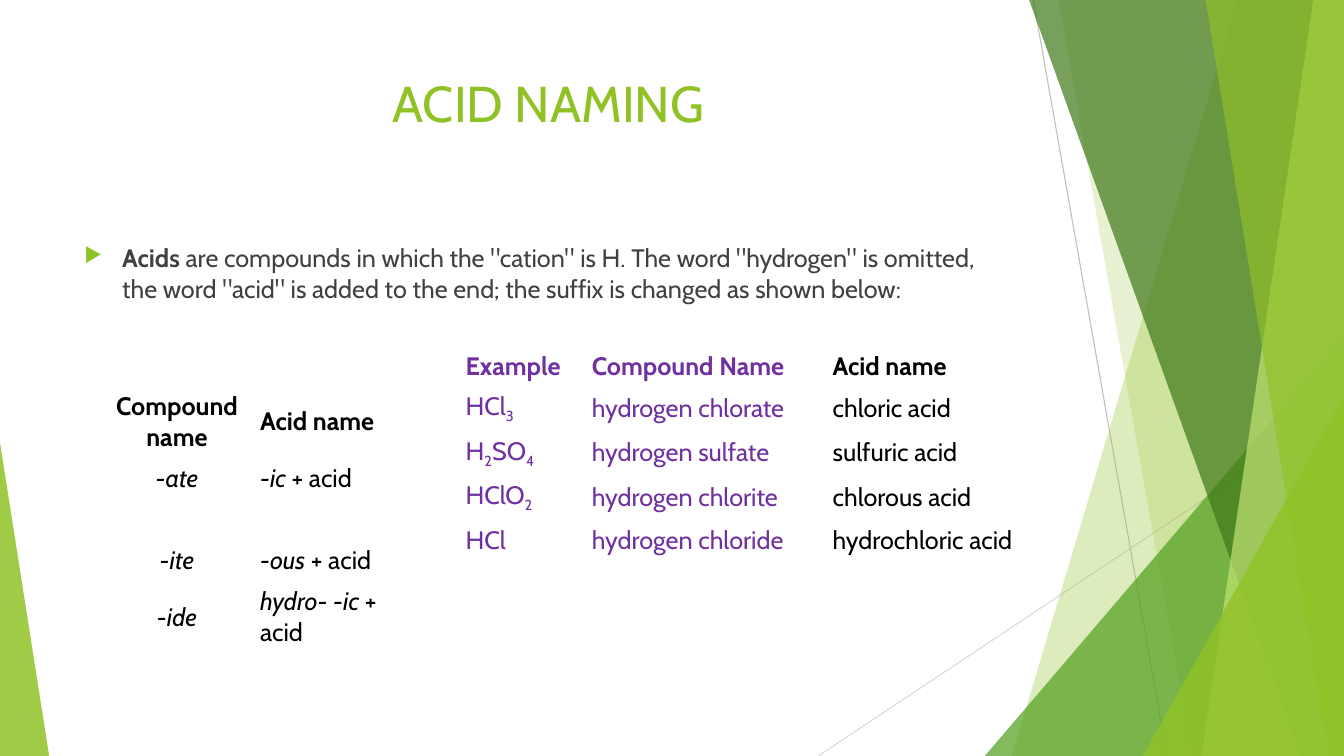
from dataclasses import dataclass
from typing import NamedTuple

from lxml import etree
from pptx import Presentation
from pptx.dml.color import RGBColor
from pptx.enum import shapes as kinds, text as txt
from pptx.oxml import ns
from pptx.util import Cm, Pt

COLORS = {
    "lime": "90C226", "green": "54A021", "forest": "3F7819", "pale": "C0E474",
    "gray": "BFBFBF", "light_gray": "D9D9D9", "body": "404040",
    "purple": "7030A0", "black": "000000",
}
FONT = "Cabin"
WIDTH, HEIGHT = 33.87, 19.05


class Run(NamedTuple):
    text: str
    bold: bool = False
    italic: bool = False
    sub: bool = False


class Ray(NamedTuple):
    start: tuple[float, float]
    end: tuple[float, float]
    color: str


class Blade(NamedTuple):
    """A panel reaching the right edge, with a slanted left side."""
    top_x: float
    bottom_x: float
    color: str
    alpha: int


class Wedge(NamedTuple):
    """A triangle standing on the bottom edge."""
    left: float
    top: float
    width: float
    apex: float
    color: str
    alpha: int


@dataclass
class Grid:
    left: float
    top: float
    columns: list[float]
    heights: list[float]
    colors: list[str]
    centered: set[int]
    rows: list[list[list[Run]]]


def rgb(name: str) -> RGBColor:
    return RGBColor.from_string(COLORS[name])


def add_xml(parent, tag: str, **attributes: str):
    return etree.SubElement(parent, ns.qn(tag), attributes)


def paint(shape, color: str, alpha: int) -> None:
    shape.shadow.inherit = False
    shape.fill.solid()
    shape.fill.fore_color.rgb = rgb(color)
    shape.line.fill.background()
    for fill_color in shape.element.iter(ns.qn("a:srgbClr")):
        add_xml(fill_color, "a:alpha", val=str(alpha * 1000))


def draw_ray(slide, ray: Ray) -> None:
    line = slide.shapes.add_connector(
        kinds.MSO_CONNECTOR.STRAIGHT, *map(Cm, ray.start + ray.end))
    line.line.color.rgb = rgb(ray.color)
    line.line.width = Pt(0.75)
    add_xml(line.element.spPr, "a:effectLst")


def draw_blade(slide, blade: Blade) -> None:
    top = Cm(-0.02)
    outline = slide.shapes.build_freeform(Cm(blade.top_x), top)
    outline.add_line_segments([
        (Cm(WIDTH), top), (Cm(WIDTH), Cm(HEIGHT)), (Cm(blade.bottom_x), Cm(HEIGHT))])
    paint(outline.convert_to_shape(), blade.color, blade.alpha)


def draw_wedge(slide, wedge: Wedge) -> None:
    triangle = slide.shapes.add_shape(
        kinds.MSO_SHAPE.ISOSCELES_TRIANGLE, Cm(wedge.left), Cm(wedge.top),
        Cm(wedge.width), Cm(HEIGHT - wedge.top))
    triangle.adjustments[0] = wedge.apex
    paint(triangle, wedge.color, wedge.alpha)


def write(paragraph, runs: list[Run], size: int, color: str) -> None:
    font = paragraph.font
    font.name, font.size = FONT, Pt(size)
    font.color.rgb = rgb(color)
    for piece in runs:
        run = paragraph.add_run()
        run.text = piece.text
        run.font.bold, run.font.italic = piece.bold, piece.italic
        if piece.sub:
            run._r.get_or_add_rPr().set("baseline", "-25000")


def add_paragraph_box(slide, top: float, height: float):
    frame = slide.shapes.add_textbox(Cm(1.88), Cm(top), Cm(23.88), Cm(height)).text_frame
    frame.word_wrap = True
    return frame.paragraphs[0]


def add_bullet(paragraph) -> None:
    properties = paragraph._p.get_or_add_pPr()
    properties.set("marL", str(Cm(0.95)))
    properties.set("indent", str(Cm(-0.95)))
    add_xml(add_xml(properties, "a:buClr"), "a:srgbClr", val=COLORS["lime"])
    add_xml(properties, "a:buSzPct", val="80000")
    add_xml(properties, "a:buChar", char="▶")


def draw_grid(slide, grid: Grid) -> None:
    table = slide.shapes.add_table(
        len(grid.rows), len(grid.columns), Cm(grid.left), Cm(grid.top),
        Cm(sum(grid.columns)), Cm(sum(grid.heights))).table
    table.first_row = table.horz_banding = False
    for column, width in zip(table.columns, grid.columns):
        column.width = Cm(width)
    for row, height, contents in zip(table.rows, grid.heights, grid.rows):
        row.height = Cm(height)
        for index, (cell, runs) in enumerate(zip(row.cells, contents)):
            cell.fill.background()
            cell.vertical_anchor = txt.MSO_ANCHOR.MIDDLE
            paragraph = cell.text_frame.paragraphs[0]
            if index in grid.centered:
                paragraph.alignment = txt.PP_ALIGN.CENTER
            write(paragraph, runs, 18, grid.colors[index])


def header(*titles: str) -> list[list[Run]]:
    return [[Run(title, bold=True)] for title in titles]


def suffix_row(compound: str, acid: str) -> list[list[Run]]:
    return [[Run(compound, italic=True)], [Run(acid, italic=True), Run(" + acid")]]


def example_row(formula: str, compound: str, acid: str) -> list[list[Run]]:
    """Digits in the formula become subscripts."""
    pieces = [""]
    for char in formula:
        if pieces[-1] and char.isdigit() != pieces[-1].isdigit():
            pieces.append("")
        pieces[-1] += char
    return [[Run(piece, sub=piece.isdigit()) for piece in pieces],
            [Run(compound)], [Run(acid)]]


RAYS = [
    Ray((26.04, 0), (29.41, HEIGHT), "gray"),
    Ray((WIDTH, 10.24), (20.62, HEIGHT), "light_gray"),
]
# Back to front
PANELS = [
    Blade(31.19, 25.5, "lime", 30),
    Blade(26.67, 30.05, "lime", 20),
    Wedge(24.82, 8.46, 9.05, 1, "green", 72),
    Blade(25.93, 32.79, "forest", 70),
    Blade(33.1, 30.28, "pale", 70),
    Blade(30.38, 33.48, "lime", 65),
    Wedge(28.8, 9.98, 5.07, 1, "lime", 80),
    Wedge(0, 11.15, 1.24, 0, "lime", 85),
]
SUFFIXES = Grid(
    2.62, 9.73, [3.68, 3.61], [1.8, 1.04, 1.04, 1.04, 1.8], ["black", "black"], {0},
    [header("Compound name", "Acid name"), suffix_row("-ate", "-ic"), [[], []],
     suffix_row("-ite", "-ous"), suffix_row("-ide", "hydro- -ic")])
EXAMPLES = Grid(
    11.48, 8.71, [3.18, 6.07, 5.94], [1.02] * 5, ["purple", "purple", "black"], set(),
    [header("Example", "Compound Name", "Acid name"),
     example_row("HCl3", "hydrogen chlorate", "chloric acid"),
     example_row("H2SO4", "hydrogen sulfate", "sulfuric acid"),
     example_row("HClO2", "hydrogen chlorite", "chlorous acid"),
     example_row("HCl", "hydrogen chloride", "hydrochloric acid")])


def main() -> None:
    deck = Presentation()
    deck.slide_width, deck.slide_height = Cm(WIDTH), Cm(HEIGHT)
    slide = deck.slides.add_slide(deck.slide_layouts[6])

    # Backdrop
    for ray in RAYS:
        draw_ray(slide, ray)
    for panel in PANELS:
        (draw_blade if isinstance(panel, Blade) else draw_wedge)(slide, panel)

    # Title and rule
    title = add_paragraph_box(slide, 1.7, 3.66)
    title.alignment = txt.PP_ALIGN.CENTER
    write(title, [Run("ACID NAMING")], 36, "lime")
    rule = add_paragraph_box(slide, 5.99, 3.1)
    rule.space_before = Pt(10)
    add_bullet(rule)
    write(rule, [Run("Acids", bold=True), Run(
        ' are compounds in which the "cation" is H. The word "hydrogen" is omitted, '
        'the word "acid" is added to the end; the suffix is changed as shown below:',
    )], 18, "body")

    # Naming tables
    for grid in (SUFFIXES, EXAMPLES):
        draw_grid(slide, grid)

    deck.save("out.pptx")


if __name__ == "__main__":
    main()
